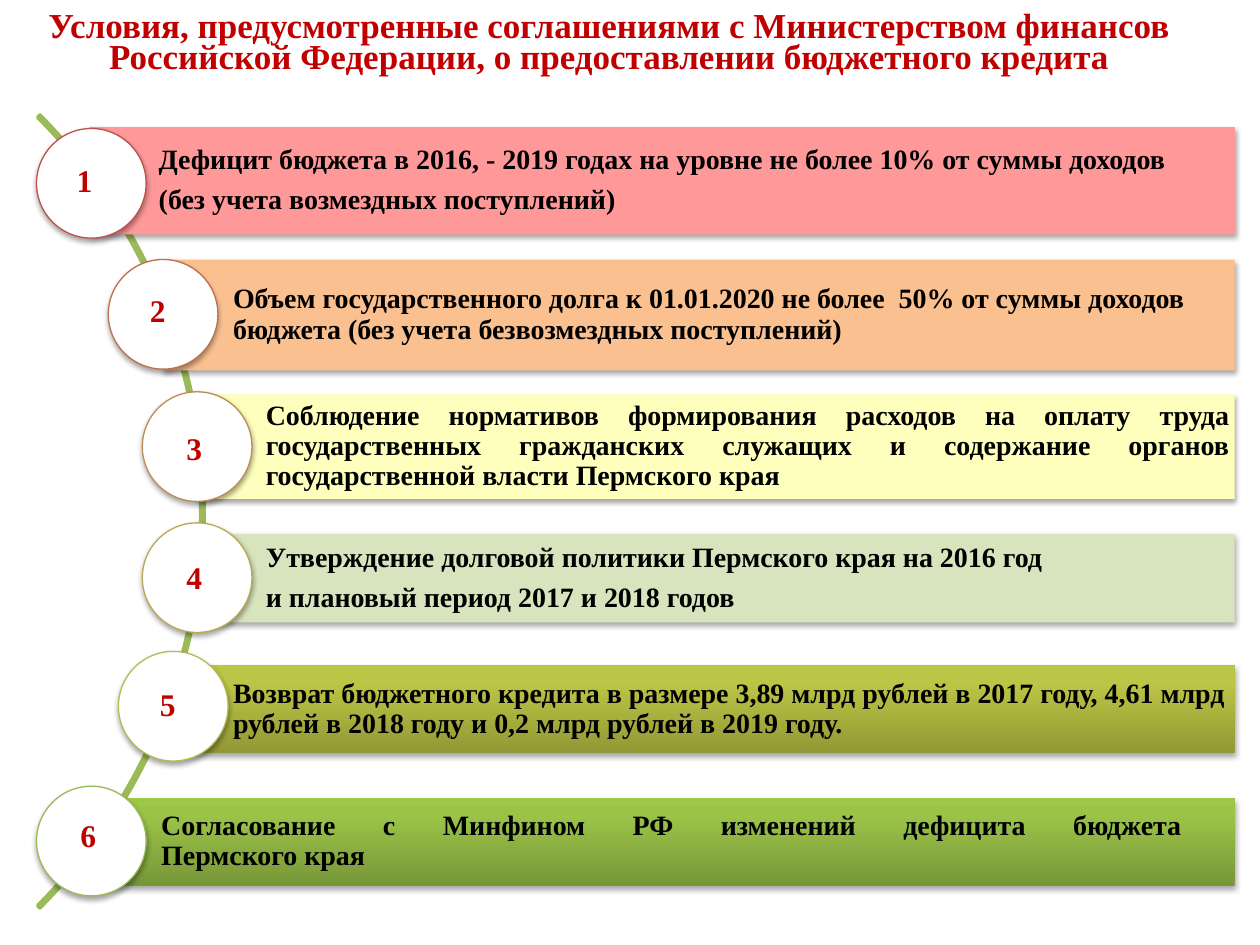
from lxml import etree
from pptx import Presentation
from pptx.dml.color import RGBColor
from pptx.enum.shapes import MSO_SHAPE
from pptx.enum.text import MSO_ANCHOR, MSO_AUTO_SIZE, PP_ALIGN
from pptx.oxml import parse_xml
from pptx.oxml.ns import nsdecls, qn
from pptx.util import Inches, Pt

ARC, BAR, CIRCLE = MSO_SHAPE.BLOCK_ARC, MSO_SHAPE.RECTANGLE, MSO_SHAPE.OVAL
TOP, MIDDLE = MSO_ANCHOR.TOP, MSO_ANCHOR.MIDDLE
LEFT, CENTER, JUSTIFY = PP_ALIGN.LEFT, PP_ALIGN.CENTER, PP_ALIGN.JUSTIFY
NO_FIT = MSO_AUTO_SIZE.NONE
FONT = "Times New Roman"
RED = RGBColor(0xC0, 0x00, 0x00)
GREEN = RGBColor(0x9B, 0xBB, 0x59)
BLACK = RGBColor(0x00, 0x00, 0x00)
WHITE = RGBColor(0xFF, 0xFF, 0xFF)
PINK = RGBColor(0xFF, 0x99, 0x99)
ORANGE = RGBColor(0xFA, 0xC0, 0x90)
YELLOW = RGBColor(0xFF, 0xFF, 0xBD)
PALE_GREEN = RGBColor(0xD7, 0xE4, 0xBD)
OLIVE_STOPS = [(0, RGBColor(0x91, 0x98, 0x35)), (80, RGBColor(0xBC, 0xC5, 0x45)),
               (100, RGBColor(0xBF, 0xC8, 0x43))]
GRASS_STOPS = [(0, RGBColor(0x77, 0x97, 0x37)), (80, RGBColor(0x9B, 0xC3, 0x48)),
               (100, RGBColor(0x9D, 0xC7, 0x46))]
RING_COLORS = [RGBColor(0xC0, 0x50, 0x4D), RGBColor(0xBF, 0x6F, 0x4F),
               RGBColor(0xBE, 0x8D, 0x52), RGBColor(0xBD, 0xA9, 0x54),
               RGBColor(0xB5, 0xBC, 0x57), GREEN]
RIGHT_EDGE = 9.8
CIRCLE_SIZE = 0.87

TITLE = ("Условия, предусмотренные соглашениями с Министерством финансов "
         "Российской Федерации, о предоставлении бюджетного кредита")
CONDITIONS = [
    ("Дефицит бюджета в 2016, - 2019 годах на уровне не более 10% от суммы доходов\n"
     "(без учета возмездных поступлений)",
     JUSTIFY, PINK, (0.71, 1.01, 0.85), (0.29, 1.02), (0.51, 1.23)),
    ("Объем государственного долга к 01.01.2020 не более  50% от суммы доходов "
     "бюджета (без учета безвозмездных поступлений)",
     LEFT, ORANGE, (1.3, 2.06, 0.88), (0.86, 2.06), (1.09, 2.26)),
    ("Соблюдение нормативов формирования расходов на оплату труда государственных "
     "гражданских служащих и содержание органов государственной власти Пермского края",
     JUSTIFY, YELLOW, (1.56, 3.13, 0.83), (1.13, 3.11), (1.38, 3.36)),
    ("Утверждение долговой политики Пермского края на 2016 год\n"
     "и плановый период 2017 и 2018 годов",
     JUSTIFY, PALE_GREEN, (1.56, 4.24, 0.7), (1.13, 4.15), (1.38, 4.38)),
    ("Возврат бюджетного кредита в размере 3,89 млрд рублей в 2017 году, 4,61 млрд "
     "рублей в 2018 году и 0,2 млрд рублей в 2019 году.",
     LEFT, OLIVE_STOPS, (1.3, 5.28, 0.7), (0.94, 5.17), (1.17, 5.39)),
    ("Согласование с Минфином РФ изменений дефицита бюджета \vПермского края",
     JUSTIFY, GRASS_STOPS, (0.73, 6.33, 0.7), (0.29, 6.24), (0.54, 6.43)),
]


def style_paragraph(para, size, color, align):
    """Set the bold serif type and alignment of a paragraph."""
    para.alignment = align
    para.font.name = FONT
    para.font.size = Pt(size)
    para.font.bold = True
    para.font.color.rgb = color


def add_shadow(shape):
    """Give a shape a soft shadow that falls straight down."""
    shape.shadow.inherit = False
    effects = shape._element.spPr.find(qn("a:effectLst"))
    outer = etree.SubElement(effects, qn("a:outerShdw"), blurRad=str(Pt(3.1)),
                             dist=str(Pt(1.8)), dir="5400000", rotWithShape="0")
    color = etree.SubElement(outer, qn("a:srgbClr"), val=str(BLACK))
    etree.SubElement(color, qn("a:alpha"), val="35000")


def fill_shape(shape, fill):
    """Fill a shape with one colour or with upward gradient stops."""
    if isinstance(fill, RGBColor):
        shape.fill.solid()
        shape.fill.fore_color.rgb = fill
        return
    shape.fill.gradient()
    shape.fill.gradient_angle = 90
    stops = shape._element.spPr.find(qn("a:gradFill")).find(qn("a:gsLst"))
    for stop in list(stops):
        stops.remove(stop)
    for position, color in fill:
        stops.append(parse_xml(f'<a:gs {nsdecls("a")} pos="{position * 1000}">'
                               f'<a:srgbClr val="{color}"/></a:gs>'))


def add_title(page, left, top, width, height):
    """Place the heading in the title placeholder."""
    title = page.shapes.title
    title.left, title.top = Inches(left), Inches(top)
    title.width, title.height = Inches(width), Inches(height)
    frame = title.text_frame
    frame.text = TITLE
    frame.auto_size = NO_FIT
    frame.vertical_anchor = TOP
    para = frame.paragraphs[0]
    style_paragraph(para, 20, RED, CENTER)
    para.line_spacing = Pt(18)


def add_arc(page, left, top, size):
    """Draw the thin arc that links the numbered circles."""
    arc = page.shapes.add_shape(ARC, Inches(left), Inches(top), Inches(size), Inches(size))
    for index, value in enumerate((189, 27, 0.003)):
        arc.adjustments[index] = value
    arc.fill.background()
    arc.line.color.rgb = GREEN
    arc.line.width = Pt(2)
    arc.shadow.inherit = False


def add_bar(page, text, align, fill, left, top, height):
    """Place a condition bar that runs to the right edge."""
    bar = page.shapes.add_shape(BAR, Inches(left), Inches(top),
                                Inches(RIGHT_EDGE - left), Inches(height))
    fill_shape(bar, fill)
    bar.line.fill.background()
    add_shadow(bar)
    frame = bar.text_frame
    frame.word_wrap = True
    frame.vertical_anchor = MIDDLE
    frame.margin_left = Inches(0.55)
    frame.margin_top = frame.margin_right = frame.margin_bottom = Inches(0.04)
    frame.text = text
    for para in frame.paragraphs:
        style_paragraph(para, 16, BLACK, align)
        para.line_spacing = 0.9
        para.space_after = Pt(5.6)


def add_circle(page, color, left, top):
    """Place a white circle with a coloured ring."""
    circle = page.shapes.add_shape(CIRCLE, Inches(left), Inches(top),
                                   Inches(CIRCLE_SIZE), Inches(CIRCLE_SIZE))
    fill_shape(circle, WHITE)
    circle.line.color.rgb = color
    circle.line.width = Pt(0.75)
    add_shadow(circle)


def add_number(page, number, left, top):
    """Place the number of a condition."""
    box = page.shapes.add_textbox(Inches(left), Inches(top), Inches(0.55), Inches(0.4))
    box.text_frame.word_wrap = True
    box.text_frame.text = str(number)
    style_paragraph(box.text_frame.paragraphs[0], 18, RED, LEFT)


def main():
    """Build the slide and save the deck."""
    deck = Presentation()
    deck.slide_width, deck.slide_height = Inches(10), Inches(7.5)
    page = deck.slides.add_slide(deck.slide_layouts[5])
    add_title(page, 0.05, 0.06, 9.57, 0.61)
    add_arc(page, -7.28, -0.39, 8.9)
    for number, condition in enumerate(CONDITIONS, 1):
        text, align, fill, bar_box, circle_spot, number_spot = condition
        add_bar(page, text, align, fill, *bar_box)
        add_circle(page, RING_COLORS[number - 1], *circle_spot)
        add_number(page, number, *number_spot)
    deck.save("out.pptx")


if __name__ == "__main__":
    main()
